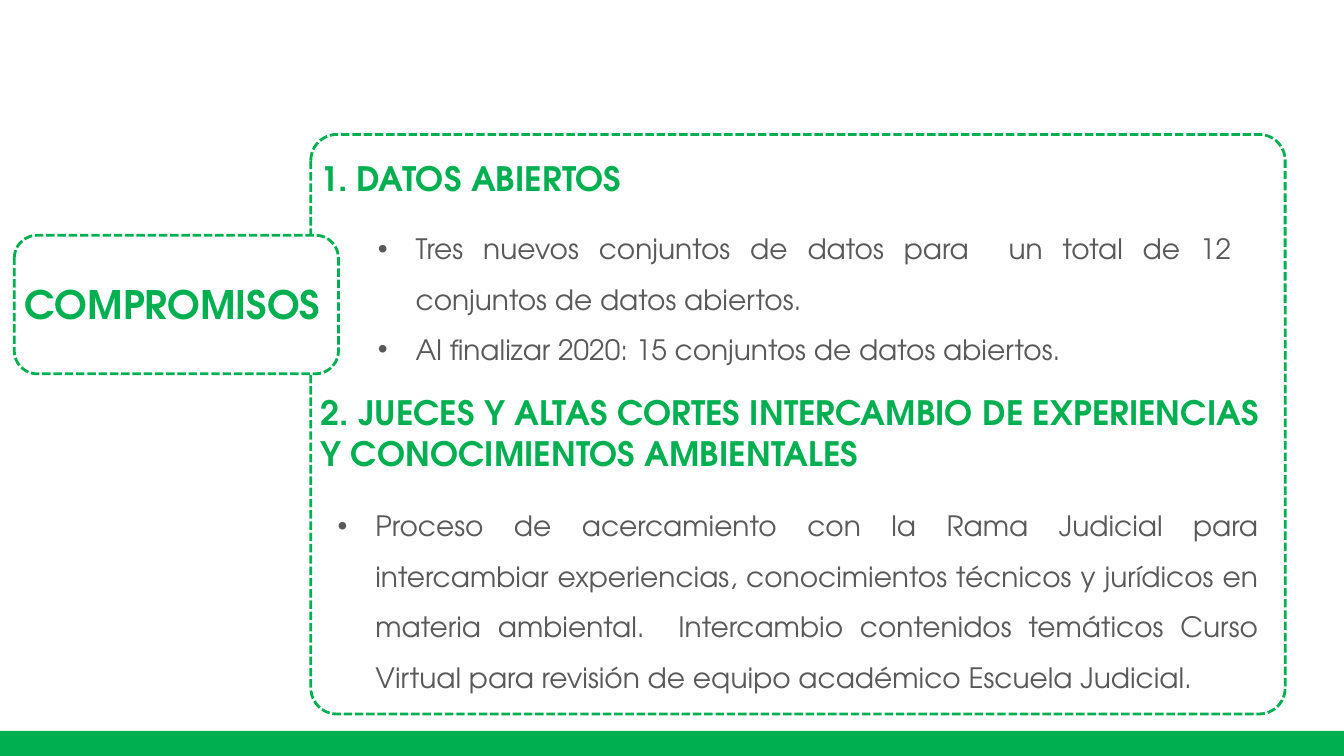
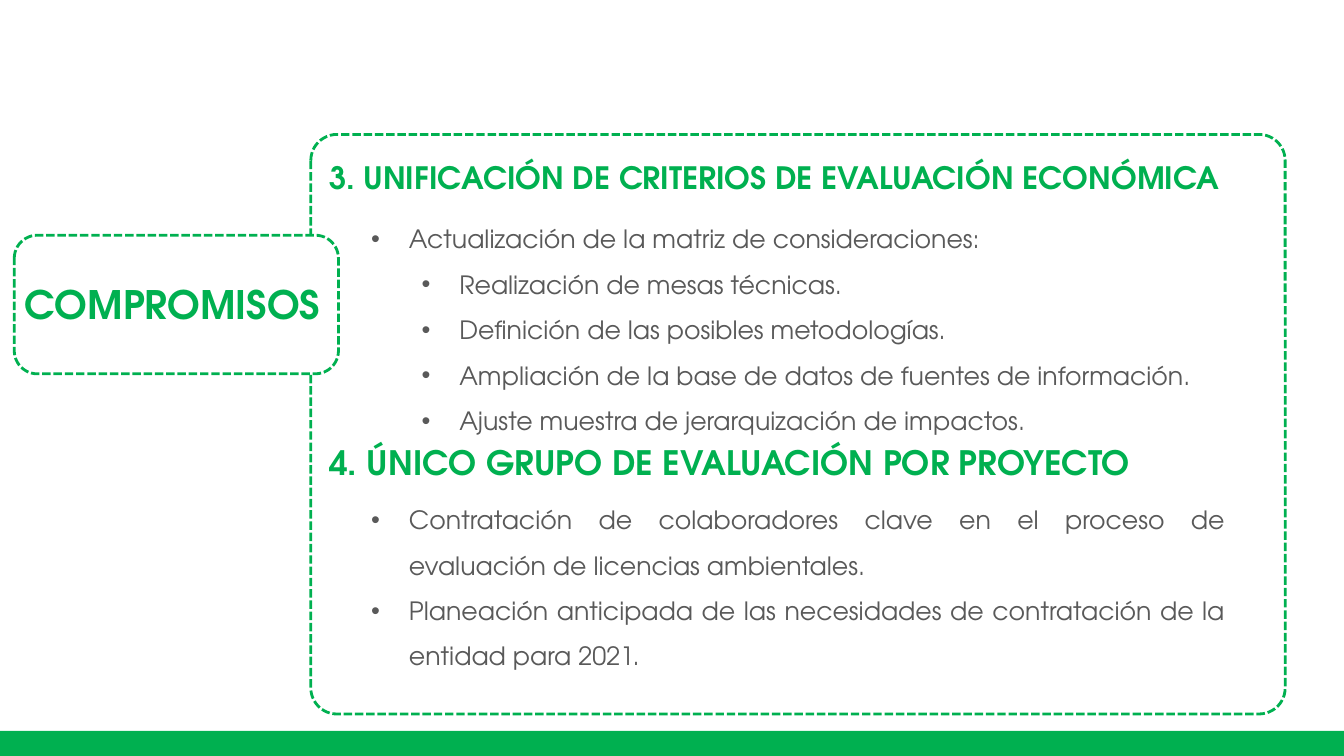
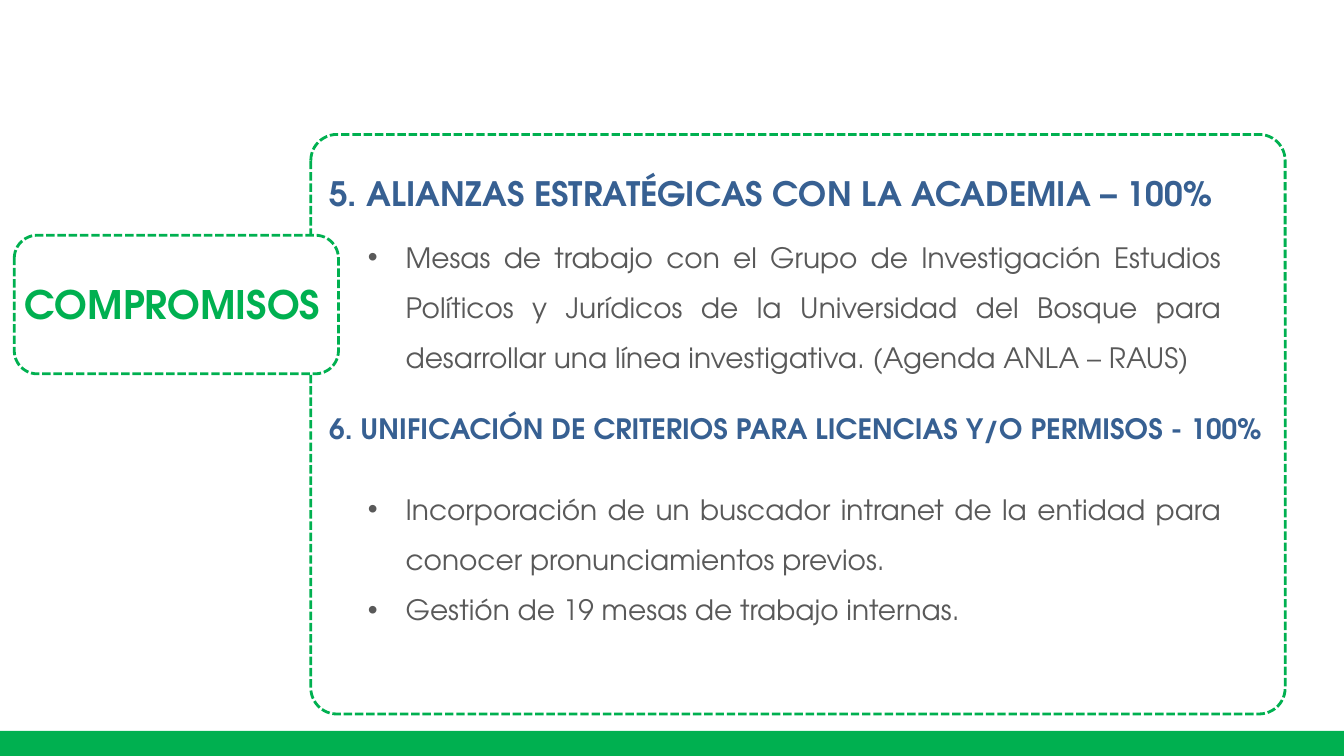
import collections
import dataclasses

import lxml.etree
import pptx
import pptx.dml.color
import pptx.enum.dml
import pptx.enum.shapes
import pptx.enum.text
import pptx.oxml.ns
import pptx.util

COLUMNS, ROWS = 160, 90
UNIT = pptx.util.Inches(1) / 12
TITLE_ONLY_LAYOUT = 5

Box = collections.namedtuple("Box", "left top width height")
Heading = collections.namedtuple("Heading", "text box size color")
Bullets = collections.namedtuple("Bullets", "items box size")


@dataclasses.dataclass(frozen=True)
class Theme:
    font: str = "TeX Gyre Adventor"
    green: str = "00B050"
    blue: str = "376092"
    gray: str = "595959"
    white: str = "FFFFFF"
    title_size: int = 28
    large: int = 24
    medium: int = 22
    body: int = 20
    small: int = 18
    outline: int = 2
    bullet_indent: float = 4.5
    level_indent: float = 6
    bullet_spacing: float = 1.5


THEME = Theme()
PANEL = Box(37, 16, 116, 69)
TAB = Box(1.7, 28, 38.6, 16.5)
TAB_TITLE = Box(0, 4.75, 38.6, 6.8)
BAND = Box(0, 87, COLUMNS, 3)

# Boxes of headings and bullets are relative to the panel.
# A bullet item is a pair of level and text.
SLIDES = [
    [
        Heading("1. DATOS ABIERTOS", Box(0, 2.25, 41.8, 6), THEME.large, THEME.green),
        Bullets([
            (0, "Tres nuevos conjuntos de datos para  un total de 12 conjuntos de datos abiertos."),
            (0, "Al finalizar 2020: 15 conjuntos de datos abiertos."),
        ], Box(6.8, 9, 104, 18.6), THEME.body),
        Heading("2. JUECES Y ALTAS CORTES INTERCAMBIO DE EXPERIENCIAS Y CONOCIMIENTOS AMBIENTALES",
                Box(0, 30.1, 116, 10.9), THEME.large, THEME.green),
        Bullets([
            (0, "Proceso de acercamiento con la Rama Judicial para intercambiar experiencias, "
                "conocimientos técnicos y jurídicos en materia ambiental.  Intercambio contenidos "
                "temáticos Curso Virtual para revisión de equipo académico Escuela Judicial."),
        ], Box(2, 42, 112, 24.7), THEME.body),
    ],
    [
        Heading("3. UNIFICACIÓN DE CRITERIOS DE EVALUACIÓN ECONÓMICA",
                Box(1, 2.25, 116, 5.6), THEME.medium, THEME.green),
        Bullets([
            (0, "Actualización de la matriz de consideraciones:"),
            (1, "Realización de mesas técnicas."),
            (1, "Definición de las posibles metodologías."),
            (1, "Ampliación de la base de datos de fuentes de información."),
            (1, "Ajuste muestra de jerarquización de impactos."),
        ], Box(6, 8.25, 104, 27.8), THEME.small),
        Heading("4. ÚNICO GRUPO DE EVALUACIÓN POR PROYECTO",
                Box(1, 36, 116, 6), THEME.large, THEME.green),
        Bullets([
            (0, "Contratación de colaboradores clave en el proceso de evaluación de licencias ambientales."),
            (0, "Planeación anticipada de las necesidades de contratación de la entidad para 2021."),
        ], Box(6, 41.7, 104, 22.3), THEME.small),
    ],
    [
        Heading("5. ALIANZAS ESTRATÉGICAS CON LA ACADEMIA – 100%",
                Box(1, 4, 114, 6), THEME.large, THEME.blue),
        Bullets([
            (0, "Mesas de trabajo con el Grupo de Investigación Estudios Políticos y Jurídicos de la "
                "Universidad del Bosque para desarrollar una línea investigativa. (Agenda ANLA – RAUS)"),
        ], Box(5.6, 10, 104, 24.7), THEME.body),
        Heading("6. UNIFICACIÓN DE CRITERIOS PARA LICENCIAS Y/O PERMISOS - 100%",
                Box(1, 32.4, 116, 5.3), THEME.body, THEME.blue),
        Bullets([
            (0, "Incorporación de un buscador intranet de la entidad para conocer pronunciamientos previos."),
            (0, "Gestión de 19 mesas de trabajo internas."),
        ], Box(5.6, 40, 104, 18.6), THEME.body),
    ],
]


def grid(value):
    return pptx.util.Emu(round(value * UNIT))


def lengths(box):
    return [grid(value) for value in box]


def inside(outer, box):
    """Turn a box relative to outer into a box on the slide."""
    return box._replace(left=outer.left + box.left, top=outer.top + box.top)


def rgb(color):
    return pptx.dml.color.RGBColor.from_string(color)


def add_bullet(paragraph, level):
    paragraph.level = level
    properties = paragraph._p.get_or_add_pPr()
    margin = THEME.bullet_indent + level * THEME.level_indent
    properties.set("marL", str(grid(margin)))
    properties.set("indent", str(grid(-THEME.bullet_indent)))
    for tag, attribute, value in (("a:buFont", "typeface", "Arial"), ("a:buChar", "char", "•")):
        element = lxml.etree.SubElement(properties, pptx.oxml.ns.qn(tag))
        element.set(attribute, value)


def write_text(shape, items, *, size, color, bold=False, bullets=False, wrap=True):
    """Fill a shape with one paragraph for each pair of level and text."""
    frame = shape.text_frame
    frame.word_wrap = wrap
    frame.auto_size = pptx.enum.text.MSO_AUTO_SIZE.SHAPE_TO_FIT_TEXT
    frame.vertical_anchor = pptx.enum.text.MSO_ANCHOR.TOP
    for index, (level, text) in enumerate(items):
        paragraph = frame.add_paragraph() if index else frame.paragraphs[0]
        paragraph.alignment = pptx.enum.text.PP_ALIGN.LEFT
        if bullets:
            add_bullet(paragraph, level)
            paragraph.alignment = pptx.enum.text.PP_ALIGN.JUSTIFY
            paragraph.line_spacing = THEME.bullet_spacing
        run = paragraph.add_run()
        run.text = text
        run.font.name = THEME.font
        run.font.size = pptx.util.Pt(size)
        run.font.bold = bold
        run.font.color.rgb = rgb(color)


def add_block(slide, box, fill, *, rounded=False, radius=None):
    """Draw a plain rectangle, or a rounded one with a dashed outline."""
    kinds = pptx.enum.shapes.MSO_SHAPE
    kind = kinds.ROUNDED_RECTANGLE if rounded else kinds.RECTANGLE
    shape = slide.shapes.add_shape(kind, *lengths(box))
    shape.shadow.inherit = False
    shape.fill.solid()
    shape.fill.fore_color.rgb = rgb(fill)
    if rounded:
        shape.line.color.rgb = rgb(THEME.green)
        shape.line.width = pptx.util.Pt(THEME.outline)
        shape.line.dash_style = pptx.enum.dml.MSO_LINE.SQUARE_DOT
    else:
        shape.line.fill.background()
    if radius is not None:
        shape.adjustments[0] = radius


def add_title_tab(slide, box, text):
    add_block(slide, box, THEME.white, rounded=True)
    title = slide.shapes.title
    title.left, title.top, title.width, title.height = lengths(inside(box, TAB_TITLE))
    write_text(title, [(0, text)], size=THEME.title_size, color=THEME.green, bold=True, wrap=False)
    slide.shapes._spTree.append(title._element)  # bring the title in front of its tab


def add_panel_texts(slide, panel, parts):
    for part in parts:
        shape = slide.shapes.add_textbox(*lengths(inside(panel, part.box)))
        if isinstance(part, Heading):
            write_text(shape, [(0, part.text)], size=part.size, color=part.color, bold=True)
        else:
            write_text(shape, part.items, size=part.size, color=THEME.gray, bullets=True)


def add_commitments_slide(presentation, parts):
    slide = presentation.slides.add_slide(presentation.slide_layouts[TITLE_ONLY_LAYOUT])
    add_block(slide, PANEL, THEME.white, rounded=True, radius=0.045)
    add_block(slide, BAND, THEME.green)
    add_title_tab(slide, TAB, "COMPROMISOS")
    add_panel_texts(slide, PANEL, parts)


def main():
    presentation = pptx.Presentation()
    presentation.slide_width = grid(COLUMNS)
    presentation.slide_height = grid(ROWS)
    for parts in SLIDES:
        add_commitments_slide(presentation, parts)
    presentation.save("out.pptx")


if __name__ == "__main__":
    main()
